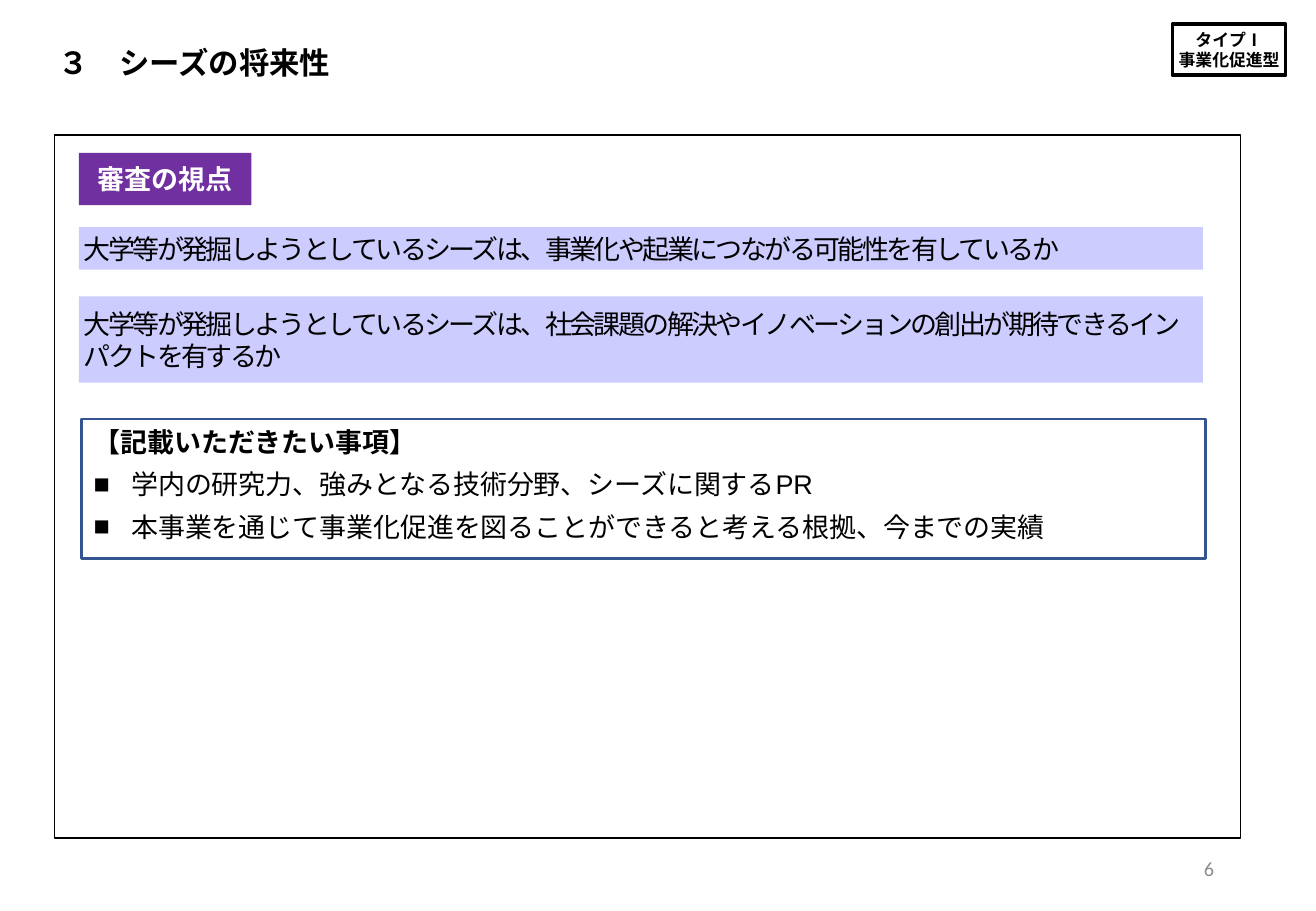
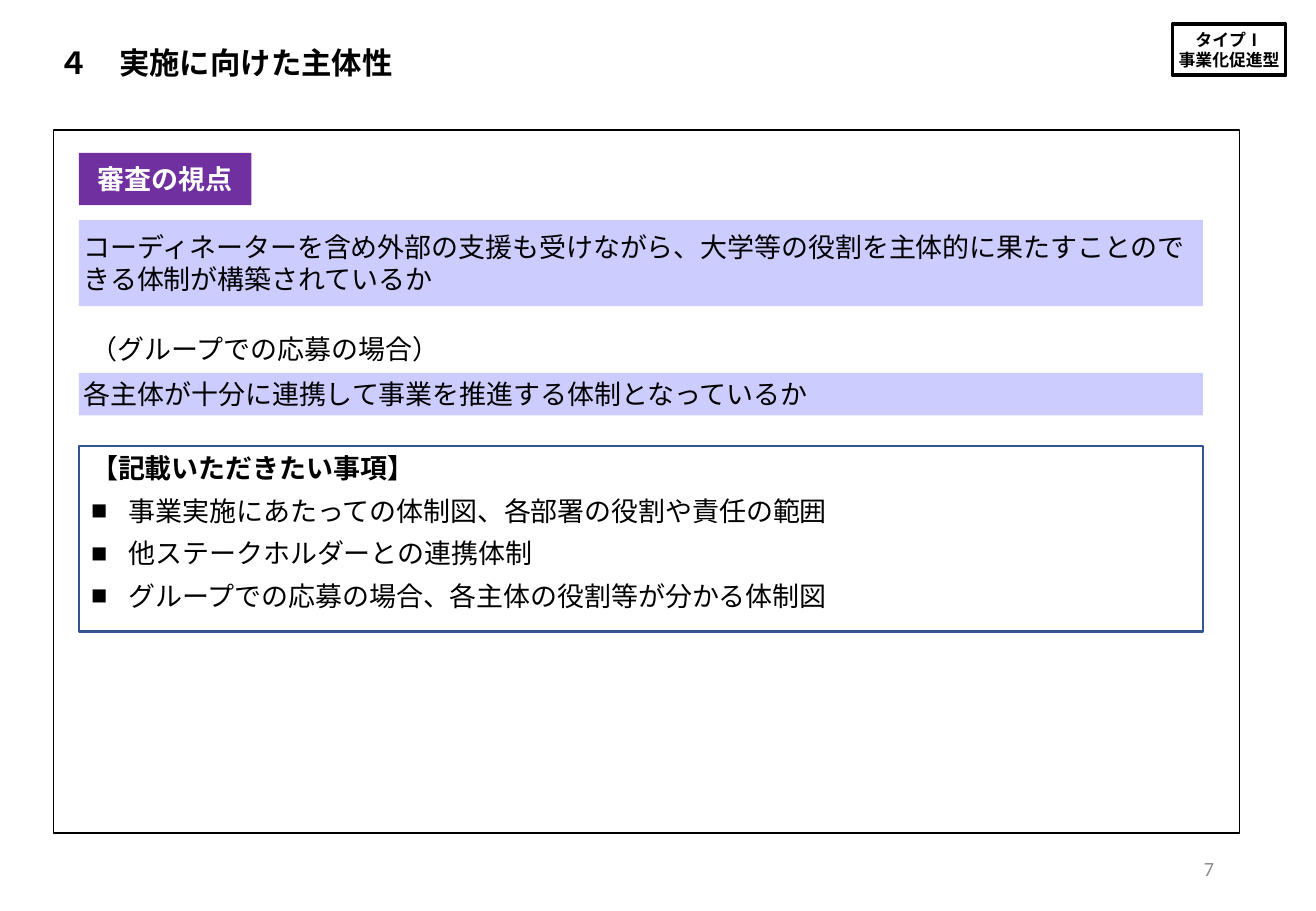
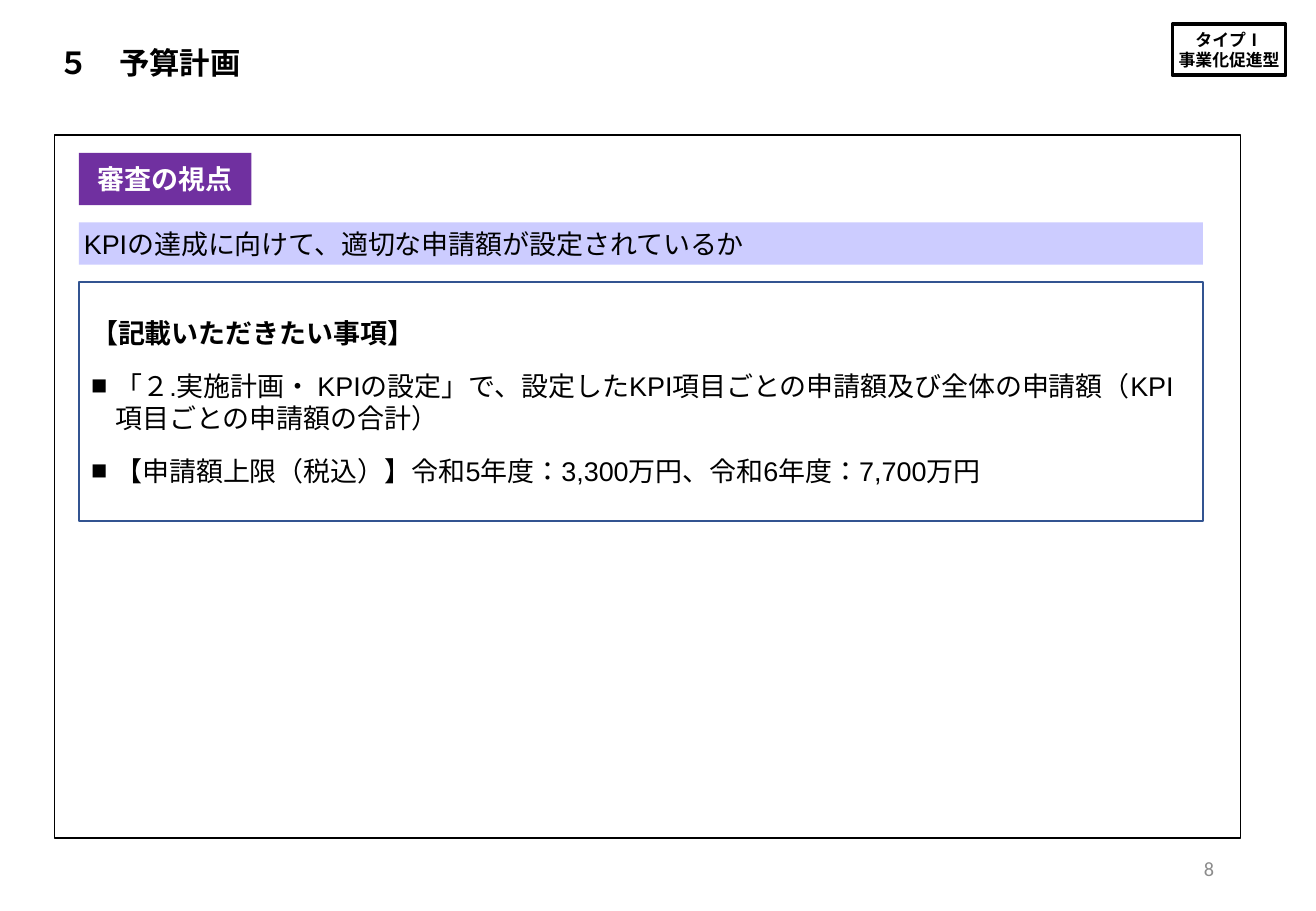
"""Builds three review-criteria slides for the commercialisation type."""
from lxml.etree import SubElement
from pptx import Presentation
from pptx.dml.color import RGBColor
from pptx.enum.shapes import MSO_SHAPE as Shape
from pptx.enum.text import MSO_ANCHOR as Anchor, MSO_AUTO_SIZE as AutoSize, PP_ALIGN as Align
from pptx.oxml.ns import qn
from pptx.util import Inches, Pt

WIDTH, HEIGHT = 10.83, 7.5
LEFT, CONTENT_WIDTH = 0.65, 9.25
ROW, TWO_ROWS = 0.35, 0.71
FIRST_NUMBER = 6
EAST_ASIAN = "Noto Sans CJK JP"
COLORS = {"ink": "000000", "paper": "FFFFFF", "label": "7030A0",
          "criterion": "CCCCFF", "request": "325491", "number": "8C8C8C"}
TIGHT = dict.fromkeys(("margin_left", "margin_right", "margin_top", "margin_bottom"), Inches(0.04))

TYPE_TAG = ["タイプⅠ", "事業化促進型"]
LABEL = "審査の視点"
REQUEST_HEADING = "【記載いただきたい事項】"

PAGES = [
    {
        "title": "３　シーズの将来性",
        "frame": (0.45, 1.11),
        "criteria": [
            (1.87, ROW, "大学等が発掘しようとしているシーズは、事業化や起業につながる可能性を有しているか"),
            (2.44, TWO_ROWS, "大学等が発掘しようとしているシーズは、社会課題の解決やイノベーションの創出が"
                             "期待できるインパクトを有するか"),
        ],
        "criteria_style": {"font": EAST_ASIAN, "spacing": -1.5},
        "request": {"at": (0.67, 3.45), "height": 1.15, "gap": 6, "heading_gap": 12,
                    "indent": 0.31, "anchor": Anchor.TOP},
        "items": ["学内の研究力、強みとなる技術分野、シーズに関するPR",
                  "本事業を通じて事業化促進を図ることができると考える根拠、今までの実績"],
    },
    {
        "title": "４　実施に向けた主体性",
        "frame": (0.44, 1.07),
        "criteria": [
            (1.81, TWO_ROWS, "コーディネーターを含め外部の支援も受けながら、大学等の役割を主体的に"
                             "果たすことのできる体制が構築されているか"),
            (3.07, ROW, "各主体が十分に連携して事業を推進する体制となっているか"),
        ],
        "condition": (2.69, "（グループでの応募の場合）"),
        "request": {"at": (LEFT, 3.67), "height": 1.53, "gap": 6, "heading_gap": 6,
                    "indent": 0.31, "anchor": Anchor.TOP},
        "items": ["事業実施にあたっての体制図、各部署の役割や責任の範囲",
                  "他ステークホルダーとの連携体制",
                  "グループでの応募の場合、各主体の役割等が分かる体制図"],
    },
    {
        "title": "５　予算計画",
        "frame": (0.45, 1.11),
        "criteria": [(1.83, ROW, "KPIの達成に向けて、適切な申請額が設定されているか")],
        "request": {"at": (LEFT, 2.32), "height": 1.97, "gap": 12, "heading_gap": 12,
                    "indent": 0.2, "anchor": Anchor.MIDDLE},
        "items": [[("「２.", "Arial"), ("実施計画・", "Calibri"), (" KPI", "Arial"), ("の設定」", "Calibri"),
                   ("で、設定したKPI項目ごとの申請額及び全体の申請額（KPI項目ごとの申請額の合計）", "Arial")],
                  "【申請額上限（税込）】令和5年度：3,300万円、令和6年度：7,700万円"],
    },
]


def color(name):
    return RGBColor.from_string(COLORS[name])


def place(part, left, top, width, height):
    for side, length in zip(("left", "top", "width", "height"), (left, top, width, height)):
        setattr(part, side, Inches(length))


def paint(part, fill=None, line=None, weight=1):
    if fill:
        part.fill.solid()
        part.fill.fore_color.rgb = color(fill)
    else:
        part.fill.background()
    if line:
        part.line.color.rgb = color(line)
        part.line.width = Pt(weight)
    else:
        part.line.fill.background()


def write_run(paragraph, words, font="Arial", size=16, ink="ink", bold=False, spacing=0):
    run = paragraph.add_run()
    run.text = words
    for key, value in {"name": font, "size": Pt(size), "bold": bold}.items():
        setattr(run.font, key, value)
    run.font.color.rgb = color(ink)
    properties = run.font._element
    properties.set("lang", "ja-JP")
    if spacing:
        properties.set("spc", str(int(spacing * 100)))
    SubElement(properties, qn("a:ea")).set("typeface", EAST_ASIAN)


def write(part, lines, align=Align.LEFT, anchor=Anchor.MIDDLE, margins=TIGHT, **style):
    frame = part.text_frame
    layout = {"word_wrap": True, "auto_size": AutoSize.NONE, "vertical_anchor": anchor, **margins}
    for key, value in layout.items():
        setattr(frame, key, value)
    for index, words in enumerate(lines):
        paragraph = frame.add_paragraph() if index else frame.paragraphs[0]
        paragraph.alignment = align
        write_run(paragraph, words, **style)


def add_box(slide, at, fill=None, line=None, weight=1):
    box = slide.shapes.add_shape(Shape.RECTANGLE, *map(Inches, at))
    box.shadow.inherit = False
    paint(box, fill, line, weight)
    return box


def set_bullet(paragraph, indent=0):
    properties = paragraph._p.get_or_add_pPr()
    properties.set("marL", str(Inches(indent)))
    properties.set("indent", str(-Inches(indent)))
    if indent:
        SubElement(properties, qn("a:buFont")).set("typeface", "Arial")
        SubElement(properties, qn("a:buChar")).set("char", "■")
    else:
        SubElement(properties, qn("a:buNone"))


def add_request(slide, items, at, height, gap, heading_gap, indent, anchor):
    request = slide.placeholders[1]
    place(request, *at, CONTENT_WIDTH, height)
    paint(request, "paper", "request", 1.5)
    write(request, [REQUEST_HEADING], anchor=anchor, margins={}, bold=True)
    heading = request.text_frame.paragraphs[0]
    heading.space_before = Pt(heading_gap)
    set_bullet(heading)
    for item in items:
        paragraph = request.text_frame.add_paragraph()
        paragraph.space_before = Pt(gap)
        set_bullet(paragraph, indent)
        for words, font in [(item, "Arial")] if isinstance(item, str) else item:
            write_run(paragraph, words, font)
    slide.shapes.element.append(request.element)


def add_page(prs, layout, number, page):
    slide = prs.slides.add_slide(layout)
    place(slide.shapes.title, 0.44, 0.32, 6.03, 0.38)
    write(slide.shapes.title, [page["title"]], font="Calibri", size=18, bold=True)
    add_box(slide, (*page["frame"], 9.76, 5.79), "paper", "ink")
    label = add_box(slide, (LEFT, 1.26, 1.42, 0.43), "label")
    write(label, [LABEL], Align.CENTER, ink="paper", bold=True)
    for top, height, words in page["criteria"]:
        criterion = add_box(slide, (LEFT, top, CONTENT_WIDTH, height), "criterion")
        write(criterion, [words], **page.get("criteria_style", {}))
    if "condition" in page:
        top, words = page["condition"]
        condition = slide.shapes.add_textbox(*map(Inches, (LEFT, top, 3.76, 0.37)))
        write(condition, [words], anchor=Anchor.TOP, margins={}, font="Calibri")
    page_number = slide.shapes.add_textbox(*map(Inches, (7.65, 6.95, 2.44, 0.4)))
    write(page_number, [str(number)], Align.RIGHT, margins={}, font="Calibri", size=12, ink="number")
    add_request(slide, page["items"], **page["request"])
    return slide


def main():
    prs = Presentation()
    prs.slide_width, prs.slide_height = Inches(WIDTH), Inches(HEIGHT)
    layout = prs.slide_layouts[1]
    slides = [add_page(prs, layout, number, page) for number, page in enumerate(PAGES, FIRST_NUMBER)]
    type_tag = add_box(slides[0], (9.65, 0.2, 0.93, 0.42), line="ink", weight=2.25)
    write(type_tag, TYPE_TAG, Align.CENTER, size=10, bold=True)
    layout.shapes.element.append(type_tag.element)
    prs.save("out.pptx")


if __name__ == "__main__":
    main()
